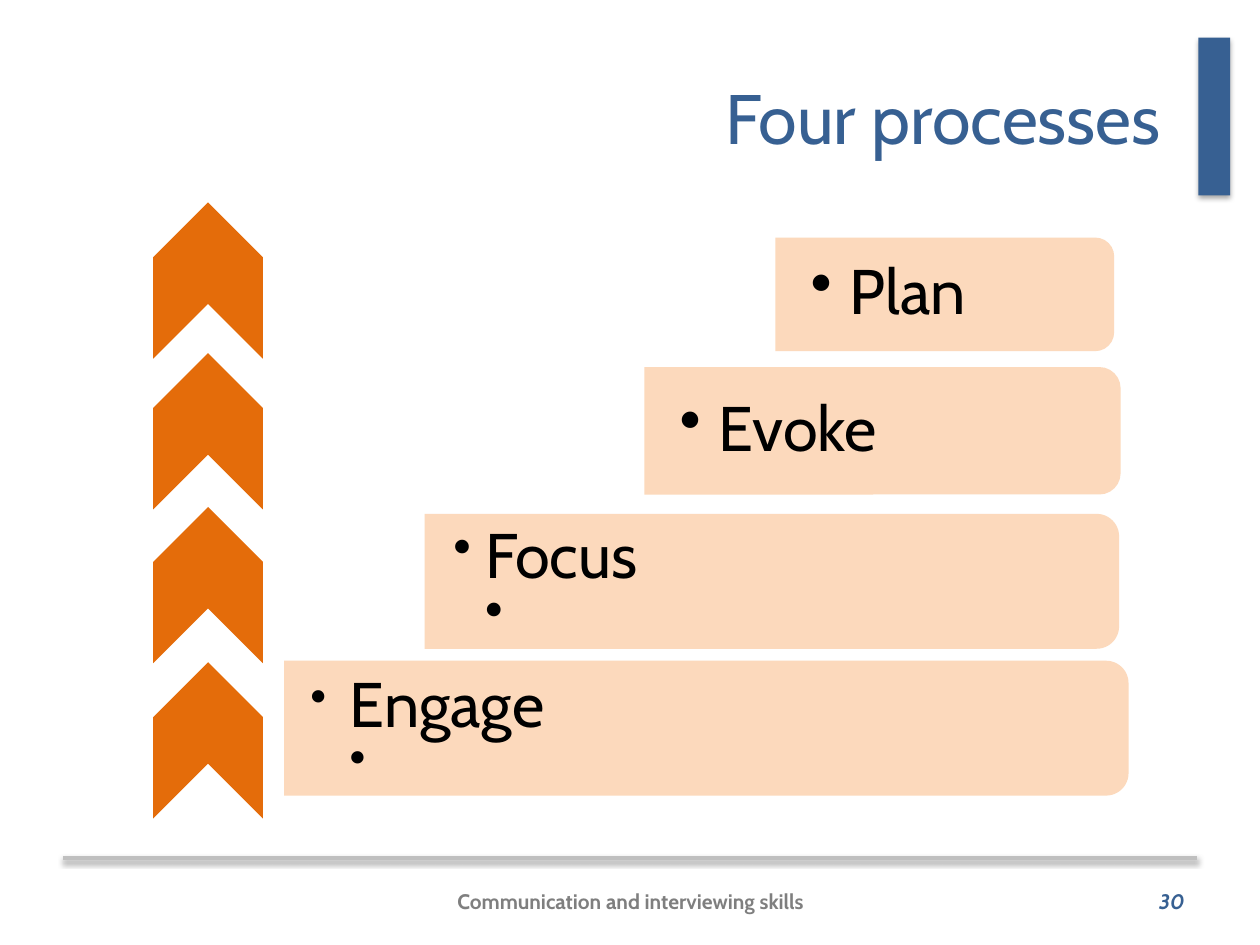
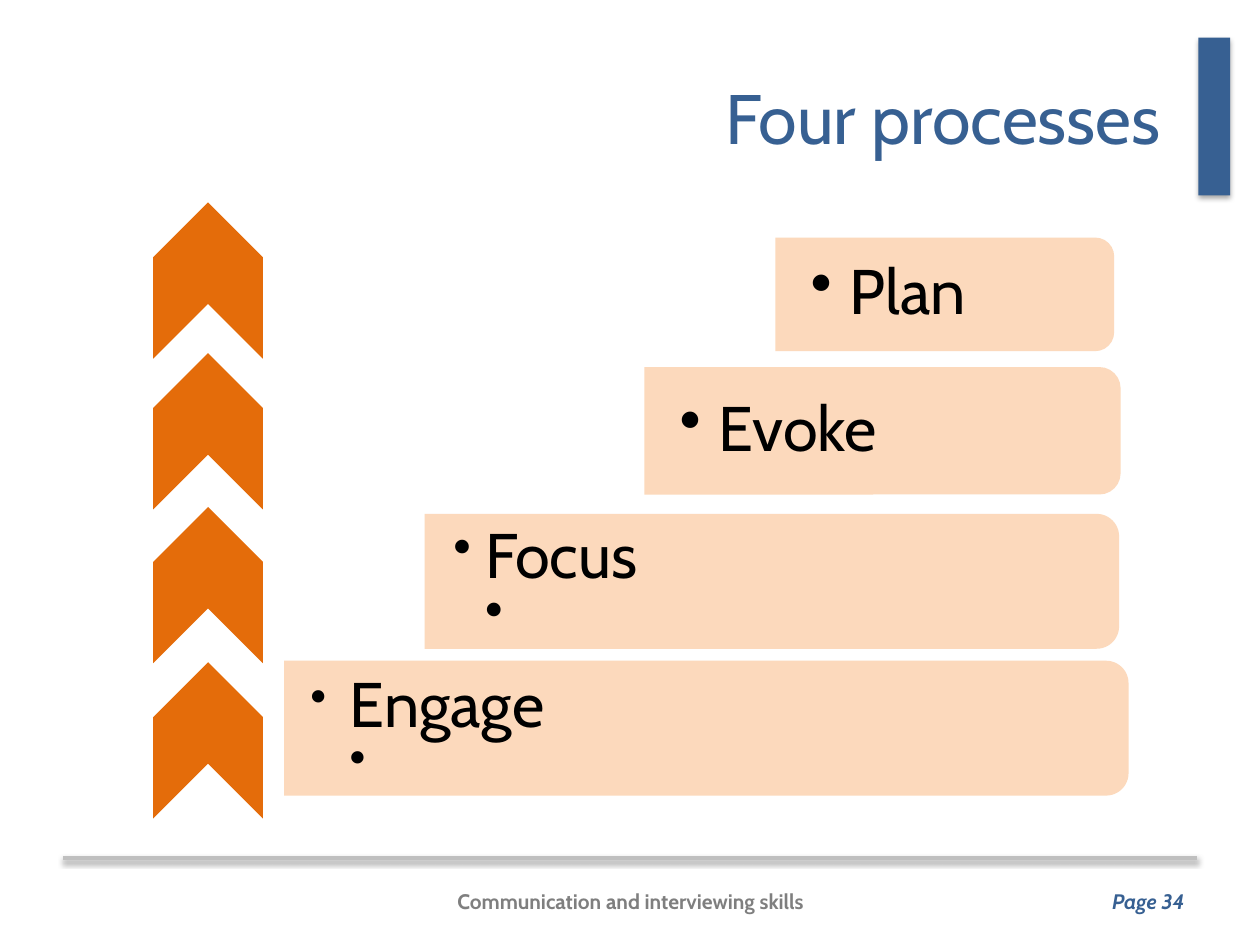
from lxml import etree
from pptx import Presentation
from pptx.dml import color
from pptx.enum import shapes, text
from pptx.oxml import ns, parse_xml
from pptx.util import Cm, Pt

HUES = {"blue": "376092", "grey": "7F7F7F", "rule": "BFBFBF",
        "arrow": "E46C0A", "bar": "FCD5B5", "ink": "000000"}
FONT = "Cabin"
SIDES = {"left": text.PP_ALIGN.LEFT, "center": text.PP_ALIGN.CENTER,
         "right": text.PP_ALIGN.RIGHT}
KINDS = shapes.MSO_SHAPE

# Upright boxes in cm, arrow tops, left inset, then bullet lines:
# (text, size, bullet percent, hanging indent, left margin, tight spacing)
STEPS = [
    ((15.63, 4.79, 6.83, 2.29), 4.08, 0.71,
     [("Plan", 36, 100, 0.79, 0.79, True)]),
    ((12.99, 7.4, 9.6, 2.57), 7.12, 0.71,
     [("Evoke", 36, 100, 0.79, 0.79, True)]),
    ((8.56, 10.36, 14, 2.72), 10.22, 0.58,
     [("Focus", 36, 83, 0.64, 0.64, False), (" ", 30, 100, 0, 0.64, True)]),
    ((5.73, 13.32, 17.02, 2.72), 13.35, 0.53,
     [("Engage", 36, 75, 0.79, 0.79, False), (" ", 27, 100, 0, 0.79, True)]),
]


def rgb(name):
    return color.RGBColor.from_string(HUES[name])


def sub(node, tag, **attrs):
    return etree.SubElement(node, ns.qn("a:" + tag), attrs)


def write(para, words, size=12, hue="ink", side="left", bold=False, slant=False):
    """Add one formatted run to a paragraph."""
    para.alignment = SIDES[side]
    run = para.add_run()
    run.text = words
    font = run.font
    font.name, font.size = FONT, Pt(size)
    font.bold, font.italic = bold, slant
    font.color.rgb = rgb(hue)


def shade(shape, alpha, dist):
    """Cast a soft shadow straight down."""
    shape.element.spPr.append(parse_xml(
        f'<a:effectLst {ns.nsdecls("a")}>'
        f'<a:outerShdw blurRad="{Pt(3.1)}" dist="{Pt(dist)}" dir="5400000" rotWithShape="0">'
        f'<a:srgbClr val="000000"><a:alpha val="{alpha}000"/></a:srgbClr>'
        '</a:outerShdw></a:effectLst>'))


class Deck:
    def __init__(self):
        self.prs = Presentation()
        self.prs.slide_width, self.prs.slide_height = Cm(25.4), Cm(19.05)
        self.base = self.prs.slide_layouts[5]
        self.page = None

    def start(self):
        self.page = self.prs.slides.add_slide(self.base)

    def shape(self, kind, x, y, w, h, hue, turn=0, alpha=None):
        """Draw a shape in its visible box, turned by quarter turns."""
        if turn:
            x, y, w, h = x + (w - h) / 2, y + (h - w) / 2, h, w
        item = self.page.shapes.add_shape(kind, Cm(x), Cm(y), Cm(w), Cm(h))
        item.rotation = turn
        item.fill.solid()
        item.fill.fore_color.rgb = rgb(hue)
        item.line.fill.background()
        if alpha:
            tint = item.element.spPr.find(".//" + ns.qn("a:srgbClr"))
            sub(tint, "alpha", val=f"{alpha}000")
        return item

    def box(self, x, y, w, h, pads=None):
        frame = self.page.shapes.add_textbox(Cm(x), Cm(y), Cm(w), Cm(h)).text_frame
        frame.word_wrap = True
        frame.vertical_anchor = text.MSO_ANCHOR.MIDDLE
        if pads:
            left, rest = pads
            frame.margin_left = Cm(left)
            frame.margin_top = frame.margin_right = frame.margin_bottom = Cm(rest)
        return frame

    def label(self, place, words, **form):
        write(self.box(*place).paragraphs[0], words, **form)

    def title(self, words):
        head = self.page.shapes.title
        head.left, head.top, head.width, head.height = Cm(1.27), Cm(0.76), Cm(22.38), Cm(3.18)
        head.text_frame.vertical_anchor = text.MSO_ANCHOR.MIDDLE
        write(head.text_frame.paragraphs[0], words, size=40, hue="blue", side="right")

    def bullets(self, frame, lines):
        for i, (words, size, scale, hang, margin, tight) in enumerate(lines):
            para = frame.add_paragraph() if i else frame.paragraphs[0]
            para.level = 1
            props = para._p.get_or_add_pPr()
            props.set("marL", str(Cm(margin)))
            props.set("indent", str(Cm(-hang)))
            sub(props, "buSzPct", val=f"{scale}000")
            sub(props, "buChar", char="•")
            if tight:
                para.line_spacing = 0.9
                para.space_after = Pt(size * 0.15)
            write(para, words, size=size)

    def frame(self):
        """Draw the side band and foot rule, then move them to the layout."""
        rule = self.page.shapes.add_connector(
            shapes.MSO_CONNECTOR.STRAIGHT, Cm(1.27), Cm(17.3), Cm(24.13), Cm(17.3))
        rule.line.color.rgb, rule.line.width = rgb("rule"), Pt(2)
        shade(rule, 38, 1.6)
        band = self.shape(KINDS.RECTANGLE, 24.16, 0.76, 0.64, 3.18, "blue")
        shade(band, 35, 1.8)
        for item in (rule, band):
            self.base.shapes.element.append(item.element)

    def footer(self, number):
        self.label((8.69, 17.65, 8.05, 1.02), "Communication and interviewing skills",
                   hue="grey", side="center", bold=True)
        self.label((18.21, 17.65, 5.92, 1.02), number,
                   hue="blue", side="right", bold=True, slant=True)

    def step(self, bar, top, inset, lines):
        x, y, w, h = bar
        self.shape(KINDS.CHEVRON, 3.09, top, 2.21, 3.15, "arrow",
                   turn=270).shadow.inherit = False
        self.shape(KINDS.ROUND_2_SAME_RECTANGLE, *bar, "bar",
                   turn=90, alpha=90).shadow.inherit = False
        pad = 0.08 if len(lines) == 1 else 0.05
        self.bullets(self.box(x, y + 0.12, w - 0.12, h - 0.24, (inset, pad)), lines)


def main():
    deck = Deck()
    for i, number in enumerate(("30", "Page 34")):
        deck.start()
        if i == 0:
            deck.frame()
        deck.title("Four processes")
        deck.footer(number)
        # Arrow and bar for each process, top to bottom
        for step in STEPS:
            deck.step(*step)
    deck.prs.save("out.pptx")


if __name__ == "__main__":
    main()
